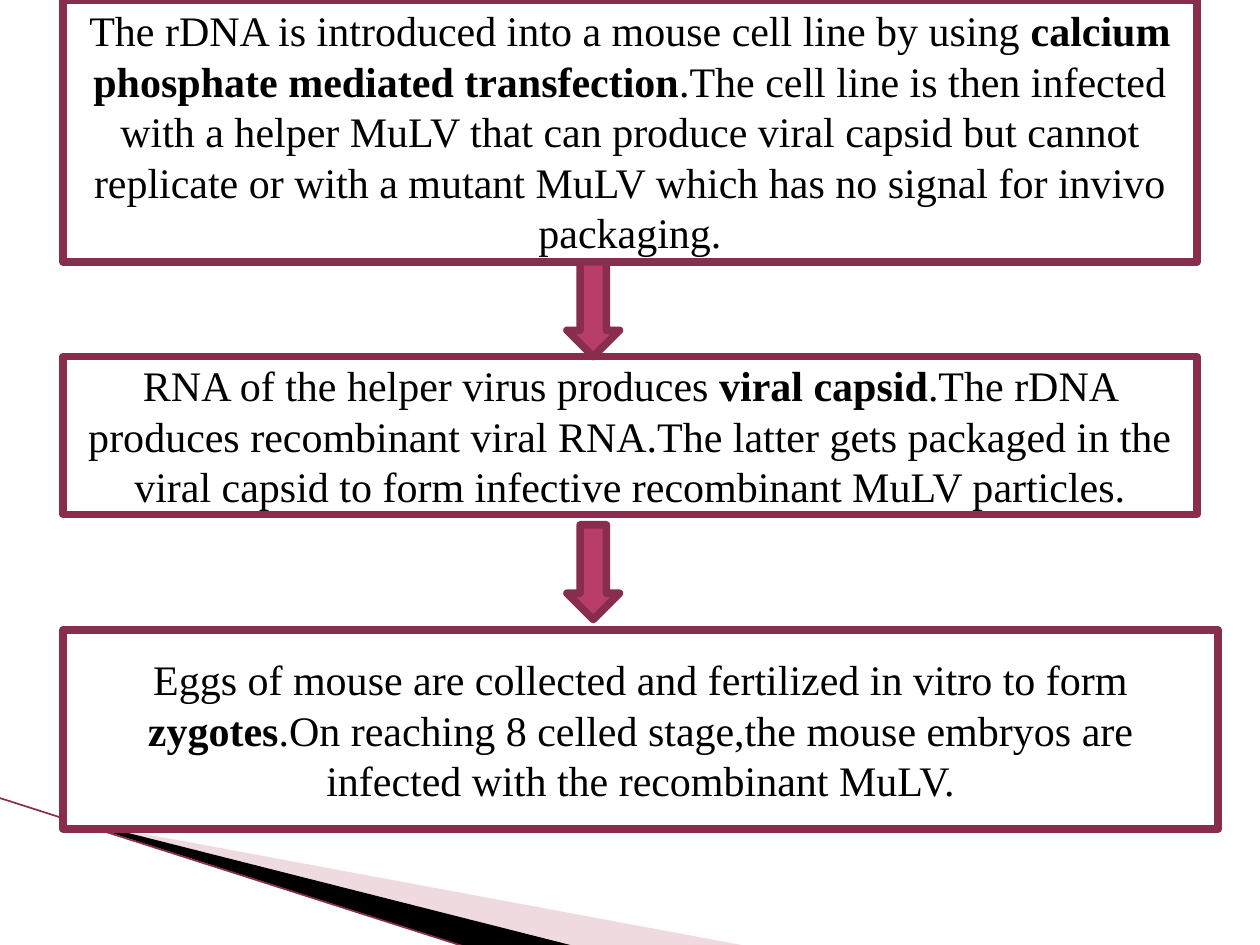
from dataclasses import dataclass

from lxml import etree
from pptx import Presentation
from pptx import util as u
from pptx.dml.color import RGBColor
from pptx.enum import shapes, text
from pptx.oxml import ns

Cm = u.Cm


@dataclass(frozen=True)
class Theme:
    paper: str = "FFFFFF"
    ink: str = "000000"
    border: str = "882D4D"
    arrow: str = "B83D68"
    wedge: str = "D8A3AF"
    face: str = "Times New Roman"
    size: int = 24
    border_width: float = 4.33
    hairline: float = 0.95


theme = Theme()


def paint(part, fill, line=None):
    part.shadow.inherit = False
    part.fill.solid()
    part.fill.fore_color.rgb = RGBColor.from_string(fill)
    if line is None:
        part.line.fill.background()
        return
    part.line.color.rgb = RGBColor.from_string(line)
    part.line.width = u.Pt(theme.border_width)
    etree.SubElement(part.line._ln, ns.qn("a:round"))


deck = Presentation()
deck.slide_width, deck.slide_height = Cm(25.4), Cm(19.05)
slide = deck.slides.add_slide(deck.slide_layouts[6])

wedges = [
    (theme.wedge, 40, [(1.4, 16.53), (15.11, 19.08), (11.58, 19.08), (1.4, 16.51)]),
    (theme.ink, 100, [(1.35, 16.48), (11.61, 19.08), (9.45, 19.1), (1.37, 16.51)]),
]
for colour, opacity, corners in wedges:
    points = [(Cm(x), Cm(y)) for x, y in corners]
    outline = slide.shapes.build_freeform(*points[0])
    outline.add_line_segments(points[1:], close=True)
    wedge = outline.convert_to_shape()
    paint(wedge, colour)
    if opacity < 100:
        tint = wedge.fill._xPr.find(".//" + ns.qn("a:srgbClr"))
        etree.SubElement(tint, ns.qn("a:alpha"), val=str(opacity * 1000))

edge = slide.shapes.add_connector(
    shapes.MSO_CONNECTOR.STRAIGHT, Cm(-0.03), Cm(16.08), Cm(9.42), Cm(19.1))
edge.line.color.rgb = RGBColor.from_string(theme.border)
edge.line.width = u.Pt(theme.hairline)
etree.SubElement(edge._element.spPr, ns.qn("a:effectLst"))

steps = [
    (0, 22.86, 5.28, [
        ("The rDNA is introduced into a mouse cell line by using ", False),
        ("calcium phosphate mediated transfection", True),
        (".The cell line is then infected with a helper MuLV that can produce viral "
         "capsid but cannot replicate or with a mutant MuLV which has no signal for "
         "invivo packaging.", False)]),
    (7.19, 22.86, 3.18, [
        ("RNA of the helper virus produces ", False),
        ("viral capsid", True),
        (".The rDNA produces recombinant viral RNA.The latter gets packaged in the "
         "viral capsid to form infective recombinant MuLV particles.", False)]),
    (12.7, 23.29, 4.01, [
        ("Eggs of mouse are collected and fertilized in vitro to form ", False),
        ("zygotes", True),
        (".On reaching 8 celled stage,the mouse embryos are infected with the "
         "recombinant MuLV.", False)]),
]
type_format = {"name": theme.face, "size": u.Pt(theme.size)}
for top, width, height, phrases in steps:
    step = slide.shapes.add_shape(
        shapes.MSO_SHAPE.RECTANGLE, Cm(1.27), Cm(top), Cm(width), Cm(height))
    paint(step, theme.paper, theme.border)
    step.text_frame.word_wrap = True
    step.text_frame.vertical_anchor = text.MSO_ANCHOR.MIDDLE
    sentence = step.text_frame.paragraphs[0]
    sentence.alignment = text.PP_ALIGN.CENTER
    for words, bold in phrases:
        phrase = sentence.add_run()
        phrase.text = words
        for attribute, value in {**type_format, "bold": bold}.items():
            setattr(phrase.font, attribute, value)
        phrase.font.color.rgb = RGBColor.from_string(theme.ink)

for top in (5.28, 10.58):
    arrow = slide.shapes.add_shape(
        shapes.MSO_SHAPE.DOWN_ARROW, Cm(11.43), Cm(top), Cm(1.06), Cm(1.91))
    paint(arrow, theme.arrow, theme.border)

deck.save("out.pptx")
